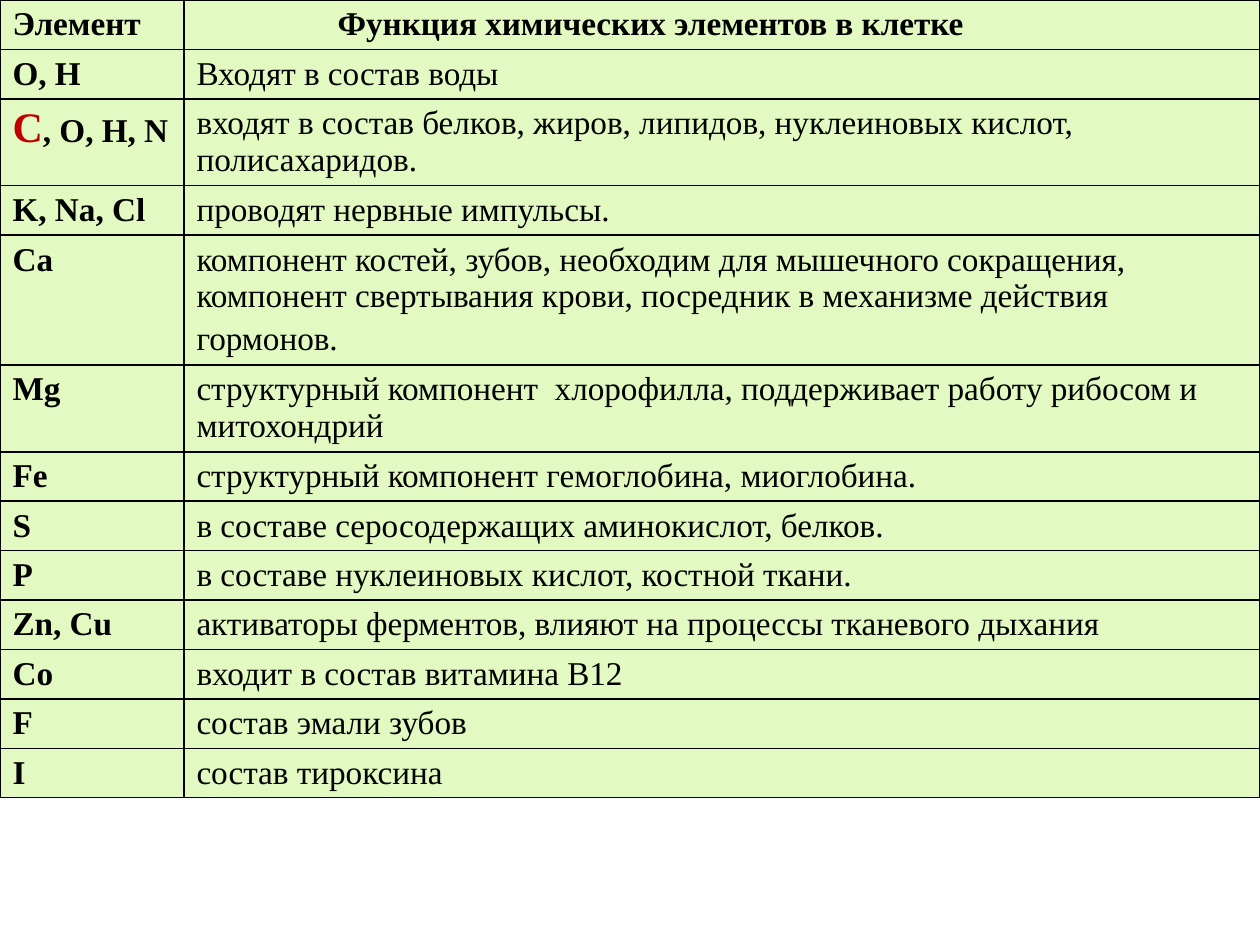
from lxml.etree import SubElement
from pptx import Presentation
from pptx.dml.color import RGBColor
from pptx.oxml.ns import qn
from pptx.util import Inches, Pt

COLORS = {"text": "000000", "accent": "C00000", "cell": "E2FAC2", "border": "000000"}
FONT = "Times New Roman"
ROW_HEIGHTS = {1: 0.39, 2: 0.69, 3: 1.03}  # by number of text lines
COLUMN_WIDTHS = (1.46, 8.54)
HEADING_INDENT = 1.22

HEADER = ("Элемент", "Функция химических элементов в клетке")
# Element symbols, paragraphs of their function, number of text lines
ELEMENTS = [
    ("О, Н", ["Входят в состав воды"], 1),
    ("С, О, Н, N", ["входят в состав белков, жиров, липидов, нуклеиновых кислот, "
                    "полисахаридов."], 2),
    ("K, Na, Cl", ["проводят нервные импульсы."], 1),
    ("Ca", ["компонент костей, зубов, необходим для мышечного сокращения, "
            "компонент свертывания крови, посредник в механизме действия",
            "гормонов."], 3),
    ("Mg", ["структурный компонент  хлорофилла, поддерживает работу рибосом "
            "и митохондрий"], 2),
    ("Fe", ["структурный компонент гемоглобина, миоглобина."], 1),
    ("S", ["в составе серосодержащих аминокислот, белков."], 1),
    ("P", ["в составе нуклеиновых кислот, костной ткани."], 1),
    ("Zn, Cu", ["активаторы ферментов, влияют на процессы тканевого дыхания"], 1),
    ("Co", ["входит в состав витамина В12"], 1),
    ("F", ["состав эмали зубов"], 1),
    ("I", ["состав тироксина"], 1),
]
CARBON = "С"


class SlideBuilder:
    def __init__(self, slide):
        self.slide = slide

    def style(self, font, size=19, bold=False, color="text"):
        font.name, font.size, font.bold = FONT, Pt(size), bold
        font.color.rgb = RGBColor.from_string(COLORS[color])

    def table(self, heights, widths):
        frame = self.slide.shapes.add_table(
            len(heights), len(widths), 0, 0, Inches(sum(widths)), Inches(sum(heights)))
        for row, height in zip(frame.table.rows, heights):
            row.height = Inches(height)
        for column, width in zip(frame.table.columns, widths):
            column.width = Inches(width)
        return frame.table

    def borders(self, cell):
        properties = cell._tc.get_or_add_tcPr()
        for side in ("lnL", "lnR", "lnT", "lnB"):
            line = SubElement(properties, qn(f"a:{side}"), w=str(Pt(1)))
            fill = SubElement(line, qn("a:solidFill"))
            SubElement(fill, qn("a:srgbClr"), val=COLORS["border"])

    def cell(self, cell, paragraphs, bold=False):
        self.borders(cell)
        cell.fill.solid()
        cell.fill.fore_color.rgb = RGBColor.from_string(COLORS["cell"])
        cell.text = "\n".join(paragraphs)
        for index, paragraph in enumerate(cell.text_frame.paragraphs):
            if index:
                paragraph.space_before = Pt(3.5)
            self.style(paragraph.font, bold=bold)

    def highlight_start(self, cell, start):
        """Set the leading letters of a cell large and in the accent colour."""
        paragraph = cell.text_frame.paragraphs[0]
        rest = paragraph.text[len(start):]
        paragraph.runs[0].text = start
        self.style(paragraph.runs[0].font, size=24, bold=True, color="accent")
        tail = paragraph.add_run()
        tail.text = rest
        self.style(tail.font, bold=True)


def main():
    presentation = Presentation()
    presentation.slide_width, presentation.slide_height = Inches(10), Inches(7.5)
    builder = SlideBuilder(presentation.slides.add_slide(presentation.slide_layouts[6]))

    # Table grid
    heights = [ROW_HEIGHTS[1]] + [ROW_HEIGHTS[lines] for _, _, lines in ELEMENTS]
    functions_table = builder.table(heights, COLUMN_WIDTHS)

    # Header row
    for column, heading in enumerate(HEADER):
        builder.cell(functions_table.cell(0, column), [heading], bold=True)
    functions_table.cell(0, 1).margin_left = Inches(HEADING_INDENT)

    # Element rows
    for row, (symbols, function, _) in enumerate(ELEMENTS, start=1):
        symbol_cell = functions_table.cell(row, 0)
        builder.cell(symbol_cell, [symbols], bold=True)
        builder.cell(functions_table.cell(row, 1), function)
        if symbols.startswith(CARBON):
            builder.highlight_start(symbol_cell, CARBON)

    presentation.save("out.pptx")


if __name__ == "__main__":
    main()
